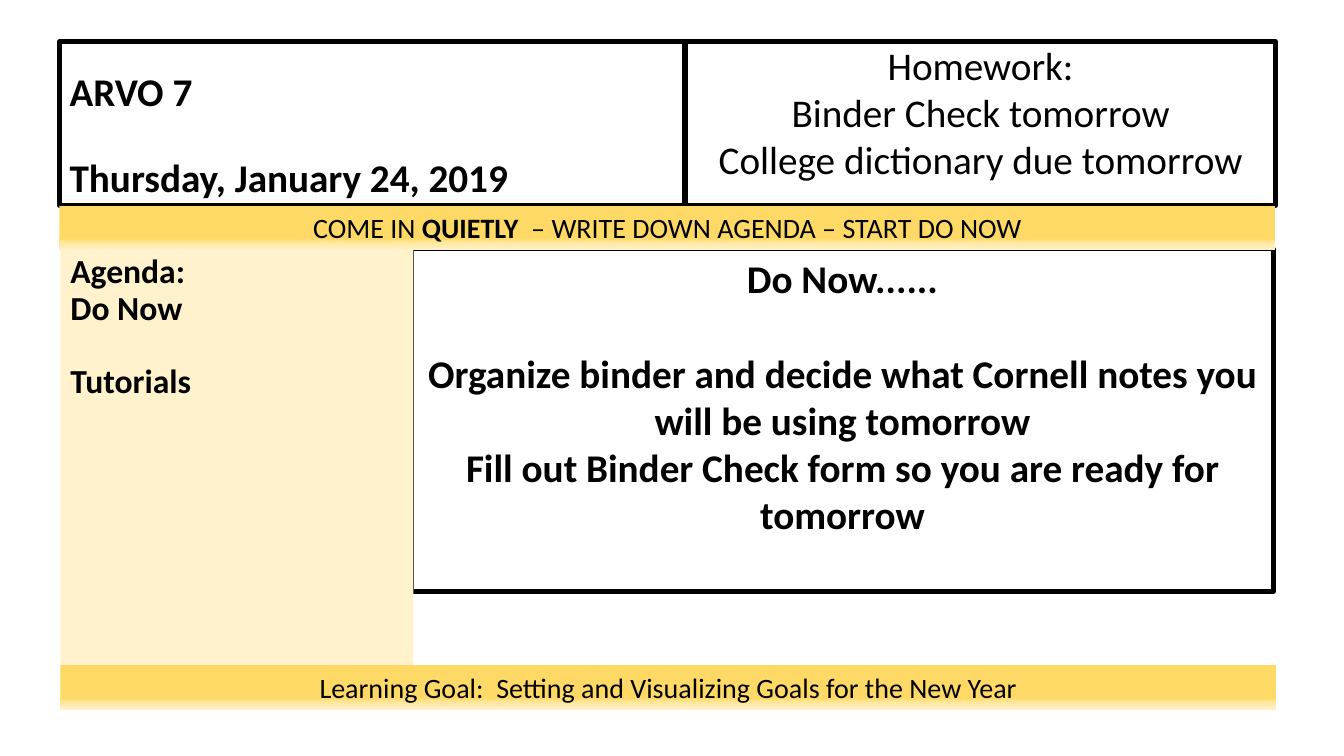
from copy import deepcopy
from dataclasses import dataclass

from pptx import Presentation
from pptx.dml.color import RGBColor
from pptx.enum.shapes import MSO_SHAPE
from pptx.enum.text import MSO_ANCHOR, MSO_AUTO_SIZE, PP_ALIGN
from pptx.oxml.ns import qn
from pptx.util import Inches, Pt

LEFT, CENTER = PP_ALIGN.LEFT, PP_ALIGN.CENTER
TOP, BOTTOM = MSO_ANCHOR.TOP, MSO_ANCHOR.BOTTOM
RECTANGLE = MSO_SHAPE.RECTANGLE
NO_AUTOFIT = MSO_AUTO_SIZE.NONE


@dataclass(frozen=True)
class Theme:
    font: str = "Calibri"
    ink: RGBColor = RGBColor(0, 0, 0)
    cream: RGBColor = RGBColor(0xFF, 0xF2, 0xCC)
    gold: RGBColor = RGBColor(0xFF, 0xD9, 0x66)
    pale_gold: RGBColor = RGBColor(0xFF, 0xE6, 0x99)
    heading: int = 28
    agenda: int = 24
    band: int = 20
    border: float = 3.25


THEME = Theme()
BAND_STOPS = [(0, THEME.gold), (0.74, THEME.gold),
              (0.83, THEME.pale_gold), (1, THEME.cream)]


def place(panel, left, top, width, height, bordered):
    panel.left, panel.top = Inches(left), Inches(top)
    panel.width, panel.height = Inches(width), Inches(height)
    if bordered:
        panel.line.color.rgb = THEME.ink
        panel.line.width = Pt(THEME.border)
    else:
        panel.line.fill.background()


def write(panel, lines, size, bold=False, align=CENTER, anchor=TOP,
          spacing=1.0, gap_after=None, emphasis=None):
    frame = panel.text_frame
    frame.text = "\n".join(lines)
    frame.word_wrap = True
    frame.auto_size = NO_AUTOFIT
    frame.vertical_anchor = anchor
    for index, paragraph in enumerate(frame.paragraphs):
        paragraph.alignment = align
        paragraph.line_spacing = spacing
        paragraph.space_before = Pt(0)
        paragraph.space_after = Pt(size * 1.22 * spacing if index == gap_after else 0)
        if emphasis:
            before, strong, after = paragraph.text.partition(emphasis)
            paragraph.runs[0].text = before
            for phrase in (strong, after):
                paragraph.add_run().text = phrase
        for run in paragraph.runs:
            run.font.name = THEME.font
            run.font.size = Pt(size)
            run.font.bold = bold or run.text == emphasis
            run.font.color.rgb = THEME.ink


deck = Presentation()
deck.slide_width, deck.slide_height = Inches(13.33), Inches(7.5)
slide = deck.slides.add_slide(deck.slide_layouts[0])

class_date = slide.shapes.title
place(class_date, 0.59, 0.41, 6.2, 1.63, True)
write(class_date, ["ARVO 7", "Thursday, January 24, 2019"], THEME.heading,
      bold=True, align=LEFT, anchor=BOTTOM, spacing=0.9, gap_after=0)

homework = slide.placeholders[1]
place(homework, 6.8, 0.41, 5.85, 1.63, True)
homework.text_frame.margin_top = 0
write(homework, ["Homework:", "Binder Check tomorrow",
                 "College dictionary due tomorrow"], THEME.heading)

do_now = slide.shapes.add_shape(RECTANGLE, 0, 0, 0, 0)
do_now.shadow.inherit = False
do_now.fill.background()
place(do_now, 4.08, 2.47, 8.55, 3.4, True)
write(do_now, ["Do Now......",
               "Organize binder and decide what Cornell notes you will be using tomorrow",
               "Fill out Binder Check form so you are ready for tomorrow"],
      THEME.heading, bold=True, gap_after=0)

bands = [
    (0.59, 2.04, "COME IN QUIETLY  – WRITE DOWN AGENDA – START DO NOW", "QUIETLY"),
    (0.6, 6.6, "Learning Goal:  Setting and Visualizing Goals for the New Year", None),
]

agenda = slide.shapes.add_shape(RECTANGLE, 0, 0, 0, 0)
agenda.shadow.inherit = False
agenda.fill.solid()
agenda.fill.fore_color.rgb = THEME.cream
place(agenda, 0.6, 2.48, 3.5, 4.28, False)
write(agenda, ["Agenda:", "Do Now", "Tutorials"], THEME.agenda,
      bold=True, align=LEFT, spacing=0.9, gap_after=1)

for left, top, message, emphasis in bands:
    band = slide.shapes.add_shape(RECTANGLE, 0, 0, 0, 0)
    band.shadow.inherit = False
    place(band, left, top, 12.06, 0.44, False)
    band.fill.gradient()
    band.fill.gradient_angle = 270
    stop_parent = band.element.spPr.find(".//" + qn("a:gsLst"))
    for _ in range(len(BAND_STOPS) - len(stop_parent)):
        stop_parent.append(deepcopy(stop_parent[0]))
    for stop, (position, color) in zip(band.fill.gradient_stops, BAND_STOPS):
        stop.position = position
        stop.color.rgb = color
    write(band, [message], THEME.band, emphasis=emphasis)

deck.save("out.pptx")
